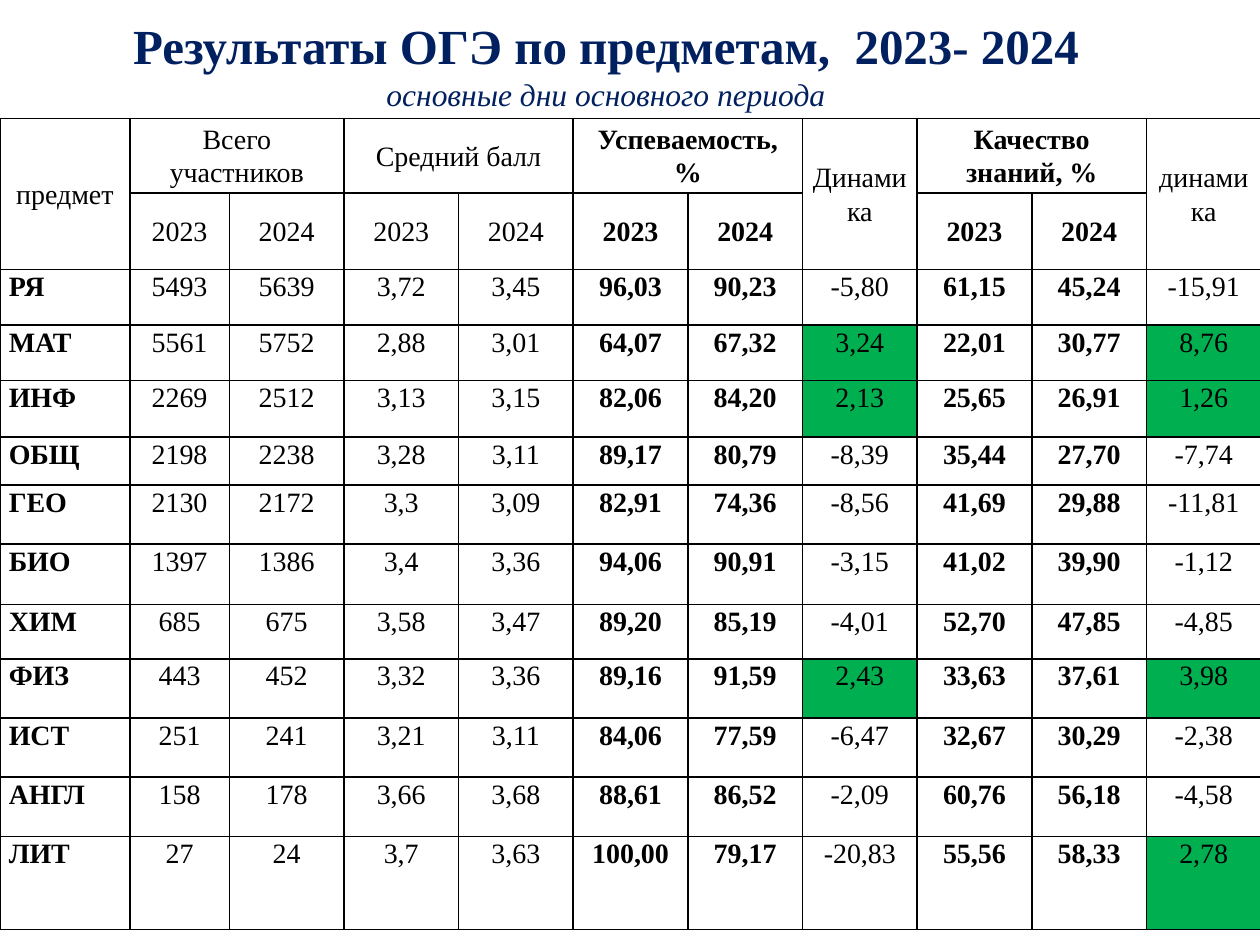
from lxml import etree
from pptx import Presentation
from pptx import util as u
from pptx.dml.color import RGBColor
from pptx.enum import text
from pptx.oxml.ns import qn

COLORS = {"navy": "002060", "black": "000000", "white": "FFFFFF", "green": "00B050"}
FONT = "Times New Roman"
CENTER, JUSTIFY = text.PP_ALIGN.CENTER, text.PP_ALIGN.JUSTIFY
MIDDLE, TOP = text.MSO_ANCHOR.MIDDLE, text.MSO_ANCHOR.TOP

COL_WIDTHS = [1.03, 0.79] + [0.91] * 9
ROW_HEIGHTS = [0.59, 0.61, 0.44, 0.44, 0.45, 0.38, 0.47, 0.48, 0.43,
               0.47, 0.47, 0.47, 0.74]
# Header label, first column, rows spanned, columns spanned
HEADERS = [
    ("предмет", 0, 2, 1),
    ("Всего участников", 1, 1, 2),
    ("Средний балл", 3, 1, 2),
    ("Успеваемость, %", 5, 1, 2),
    ("Динамика", 7, 2, 1),
    ("Качество знаний, %", 8, 1, 2),
    ("динамика", 10, 2, 1),
]
BOLD_COLS = {5, 6, 8, 9}
CHANGE_COLS = {7, 10}
RESULTS = """
РЯ 5493 5639 3,72 3,45 96,03 90,23 -5,80 61,15 45,24 -15,91
МАТ 5561 5752 2,88 3,01 64,07 67,32 3,24 22,01 30,77 8,76
ИНФ 2269 2512 3,13 3,15 82,06 84,20 2,13 25,65 26,91 1,26
ОБЩ 2198 2238 3,28 3,11 89,17 80,79 -8,39 35,44 27,70 -7,74
ГЕО 2130 2172 3,3 3,09 82,91 74,36 -8,56 41,69 29,88 -11,81
БИО 1397 1386 3,4 3,36 94,06 90,91 -3,15 41,02 39,90 -1,12
ХИМ 685 675 3,58 3,47 89,20 85,19 -4,01 52,70 47,85 -4,85
ФИЗ 443 452 3,32 3,36 89,16 91,59 2,43 33,63 37,61 3,98
ИСТ 251 241 3,21 3,11 84,06 77,59 -6,47 32,67 30,29 -2,38
АНГЛ 158 178 3,66 3,68 88,61 86,52 -2,09 60,76 56,18 -4,58
ЛИТ 27 24 3,7 3,63 100,00 79,17 -20,83 55,56 58,33 2,78
"""


class SlideBuilder:
    """Holds the text style and the current slide."""

    def __init__(self, prs):
        self.slide = prs.slides.add_slide(prs.slide_layouts[5])

    def run(self, p, value, size, color, bold=False, italic=False):
        r = p.add_run()
        r.text = value
        style = {"name": FONT, "size": u.Pt(size), "bold": bold, "italic": italic}
        for name, setting in style.items():
            setattr(r.font, name, setting)
        r.font.color.rgb = RGBColor.from_string(COLORS[color])

    def title(self, heading, subheading, left, top, width, height):
        sp = self.slide.shapes.title
        box = {"left": left, "top": top, "width": width, "height": height}
        for name, length in box.items():
            setattr(sp, name, u.Inches(length))
        tf = sp.text_frame
        tf.vertical_anchor = MIDDLE
        tf.auto_size = text.MSO_AUTO_SIZE.NONE
        p = tf.paragraphs[0]
        p.alignment = CENTER
        self.run(p, heading, 28, "navy", bold=True)
        p.add_line_break()
        self.run(p, subheading, 18, "navy", italic=True)

    def table(self, left, top, widths, heights):
        frame = self.slide.shapes.add_table(
            len(heights), len(widths), u.Inches(left), u.Inches(top),
            u.Inches(sum(widths)), u.Inches(sum(heights)))
        tbl = frame.table
        tbl.first_row = tbl.horz_banding = False
        for col, width in zip(tbl.columns, widths):
            col.width = u.Inches(width)
        for row, height in zip(tbl.rows, heights):
            row.height = u.Inches(height)
        for cell in tbl.iter_cells():
            self.borders(cell)
            cell.fill.background()
        return tbl

    def borders(self, cell):
        tc_pr = cell._tc.get_or_add_tcPr()
        for side in ("lnL", "lnR", "lnT", "lnB"):
            ln = etree.SubElement(tc_pr, qn(f"a:{side}"), w=str(u.Pt(1)))
            fill = etree.SubElement(ln, qn("a:solidFill"))
            etree.SubElement(fill, qn("a:srgbClr"), val=COLORS["black"])

    def cell(self, cell, value, bold=False, align=CENTER, anchor=TOP, fill=None):
        layout = {"margin_left": u.Inches(0.07), "margin_right": u.Inches(0.07),
                  "margin_top": 0, "margin_bottom": 0, "vertical_anchor": anchor}
        for name, setting in layout.items():
            setattr(cell, name, setting)
        p = cell.text_frame.paragraphs[0]
        p.alignment = align
        p.line_spacing = 1.07
        self.run(p, value, 16, "black", bold=bold)
        if fill:
            cell.fill.solid()
            cell.fill.fore_color.rgb = RGBColor.from_string(COLORS[fill])


def add_header(s, tbl):
    for label, col, rows, cols in HEADERS:
        bold = col in BOLD_COLS
        cell = tbl.cell(0, col)
        cell.merge(tbl.cell(rows - 1, col + cols - 1))
        s.cell(cell, label, bold, anchor=MIDDLE)
        if cols == 2:
            for offset, year in enumerate(("2023", "2024")):
                s.cell(tbl.cell(1, col + offset), year, bold, anchor=MIDDLE)


def add_results(s, tbl):
    """Fill the subject rows, with green behind each gain."""
    for row, line in enumerate(RESULTS.strip().splitlines(), start=2):
        for col, value in enumerate(line.split()):
            fill = None
            if col in CHANGE_COLS:
                fill = "white" if value.startswith("-") else "green"
            s.cell(tbl.cell(row, col), value, bold=col == 0 or col in BOLD_COLS,
                   align=CENTER if col else JUSTIFY, fill=fill)


def main():
    prs = Presentation()
    prs.slide_width, prs.slide_height = u.Inches(10), u.Inches(7.5)
    s = SlideBuilder(prs)
    s.title("Результаты ОГЭ по предметам,  2023- 2024",
            "основные дни основного периода", 0.31, 0, 9, 1.02)
    tbl = s.table(0, 0.94, COL_WIDTHS, ROW_HEIGHTS)
    add_header(s, tbl)
    add_results(s, tbl)
    prs.save("out.pptx")


if __name__ == "__main__":
    main()
